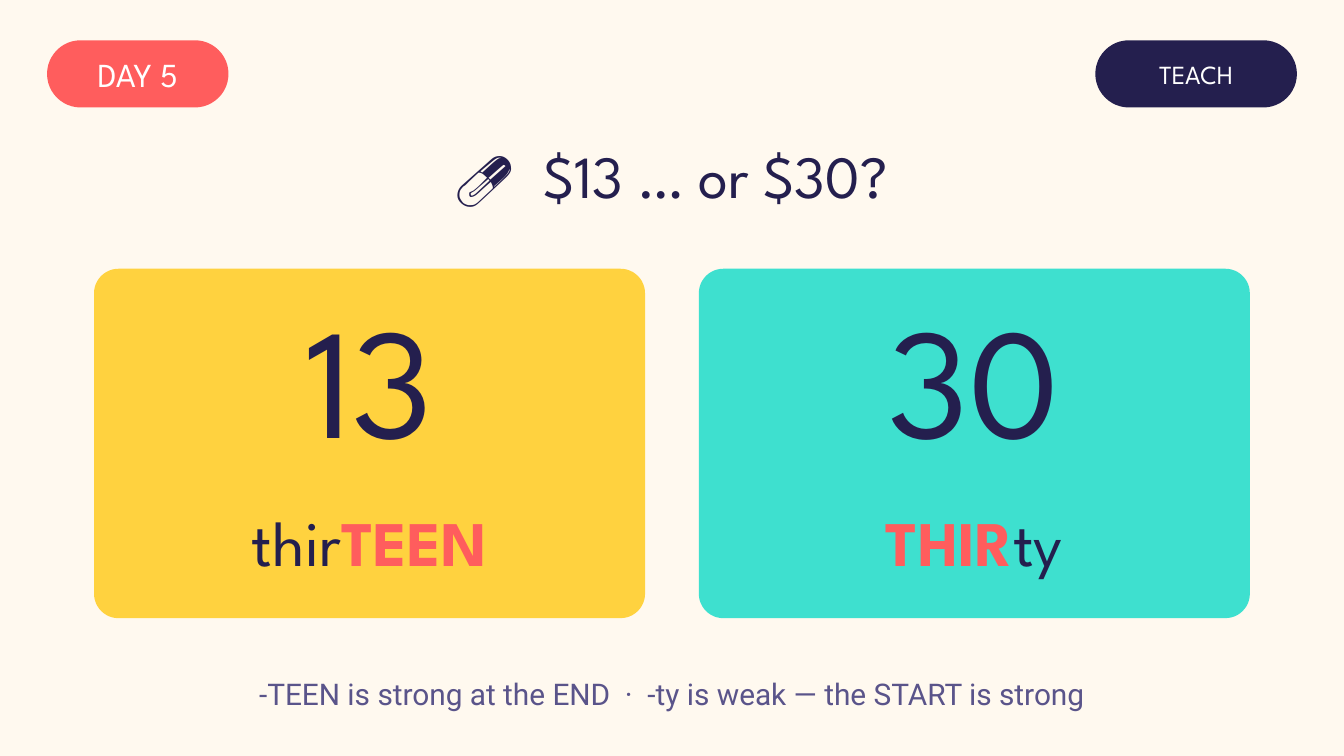
"""Build the thirteen or thirty teaching slide."""
import pptx
import pptx.util
import pptx.dml.color
import pptx.enum.shapes
import pptx.enum.text

RGB = pptx.dml.color.RGBColor
CREAM = RGB(0xFF, 0xF9, 0xEF)
CORAL = RGB(0xFF, 0x5D, 0x5D)
NAVY = RGB(0x24, 0x1F, 0x4E)
WHITE = RGB(0xFF, 0xFF, 0xFF)
GOLD = RGB(0xFF, 0xD2, 0x3F)
TEAL = RGB(0x3E, 0xE0, 0xCF)
MAUVE = RGB(0x5A, 0x54, 0x8A)
PX = 4572


def panel(area, fill, bend):
    shape = slide.shapes.add_shape(
        pptx.enum.shapes.MSO_SHAPE.ROUNDED_RECTANGLE, *[n * PX for n in area])
    shape.adjustments[0] = bend
    shape.shadow.inherit = False
    shape.fill.solid()
    shape.fill.fore_color.rgb = fill
    shape.line.fill.background()


def write(text, area, size, color=NAVY, font="League Spartan", strong="", inset=20, box=None):
    left, top, width, height = [n * PX for n in area]
    box = box or slide.shapes.add_textbox(left, top, width, height)
    box.left, box.top, box.width, box.height = left, top, width, height
    frame = box.text_frame
    frame.word_wrap = True
    frame.auto_size = pptx.enum.text.MSO_AUTO_SIZE.NONE
    frame.vertical_anchor = pptx.enum.text.MSO_ANCHOR.MIDDLE
    frame.margin_left = frame.margin_right = inset * PX
    frame.margin_top = frame.margin_bottom = inset // 2 * PX
    para = frame.paragraphs[0]
    para.alignment = pptx.enum.text.PP_ALIGN.CENTER
    parts = text.partition(strong) if strong else [text]
    for part in filter(None, parts):
        run = para.add_run()
        run.text = part
        run.font.name = font
        run.font.size = pptx.util.Pt(size)
        run.font.bold = part == strong
        run.font.color.rgb = CORAL if part == strong else color


deck = pptx.Presentation()
deck.slide_width, deck.slide_height = 2000 * PX, 1125 * PX
slide = deck.slides.add_slide(deck.slide_layouts[5])
slide.background.fill.solid()
slide.background.fill.fore_color.rgb = CREAM

write("💊  $13 … or $30?", (0, 190, 2000, 140), 32, box=slide.shapes.title)

for text, left, width, size, fill in [("DAY 5", 70, 270, 18, CORAL),
                                      ("TEACH", 1630, 300, 14, NAVY)]:
    area = (left, 60, width, 100)
    panel(area, fill, 0.5)
    write(text, area, size, color=WHITE, inset=0)

cards = [("13", "thirTEEN", "TEEN", GOLD), ("30", "THIRty", "THIR", TEAL)]
for i, (digits, word, stress, fill) in enumerate(cards):
    left = 140 + 900 * i
    panel((left, 400, 820, 520), fill, 0.07)
    write(digits, (left, 430, 820, 260), 84)
    write(word, (left, 740, 820, 130), 34, strong=stress)

write("-TEEN is strong at the END  ·  -ty is weak — the START is strong",
      (0, 990, 2000, 84), 16, color=MAUVE, font="Roboto")

deck.save("out.pptx")
